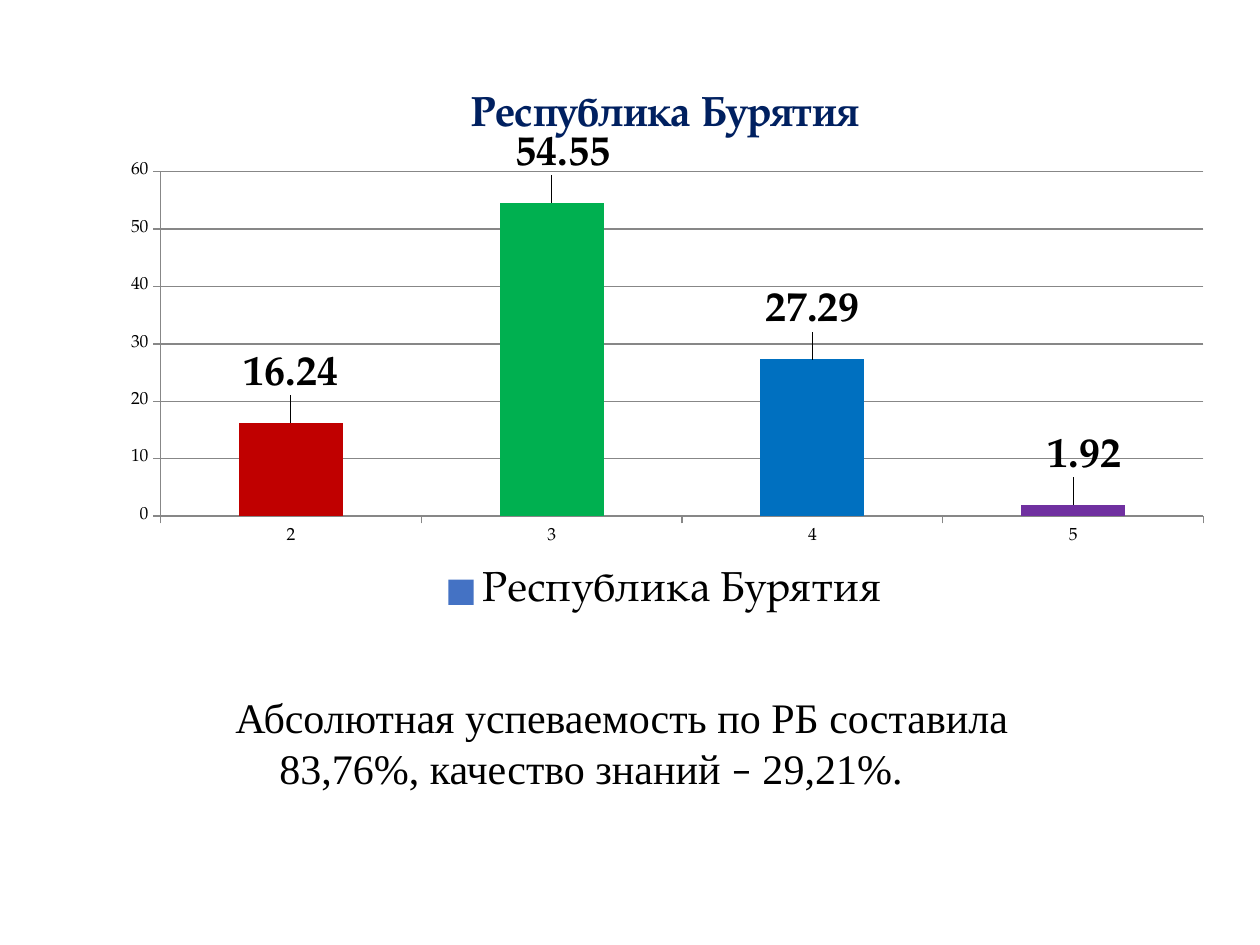
from lxml import etree
from pptx import Presentation
from pptx.chart.data import CategoryChartData
from pptx.dml.color import RGBColor
from pptx.enum.chart import XL_CHART_TYPE, XL_LABEL_POSITION, XL_LEGEND_POSITION, XL_TICK_MARK
from pptx.enum.text import MSO_ANCHOR, PP_ALIGN
from pptx.oxml.ns import qn
from pptx.util import Inches, Pt

COLUMNS = XL_CHART_TYPE.COLUMN_CLUSTERED
OUTSIDE_END = XL_LABEL_POSITION.OUTSIDE_END
BOTTOM = XL_LEGEND_POSITION.BOTTOM
OUTSIDE, NO_TICK = XL_TICK_MARK.OUTSIDE, XL_TICK_MARK.NONE
MIDDLE, CENTER = MSO_ANCHOR.MIDDLE, PP_ALIGN.CENTER

WIDTH, HEIGHT = Inches(10), Inches(7.5)
COLORS = {"text": "000000", "title": "002060", "series": "4472C4", "line": "878787"}
CHART_FONT, BODY_FONT, DASH_FONT = "TeX Gyre Pagella", "Times New Roman", "Calibri"
SMALL, LARGE = Pt(10), Pt(24)
REGION = "Республика Бурятия"
GRADES = [
    ("2", 16.24, "C00000", 0),
    ("3", 54.55, "00B050", 0.01),
    ("4", 27.29, "0070C0", 0),
    ("5", 1.92, "7030A0", 0.01),
]
LABEL_LIFT = -0.04
PLOT_BOX = {"x": 0.05, "y": 0.19, "w": 0.93, "h": 0.62}
SUMMARY = [
    ("Абсолютная успеваемость по РБ составила 83,76%, качество знаний ", BODY_FONT),
    ("–", DASH_FONT),
    (" 29,21%.", BODY_FONT),
]


def share_box(left, top, width, height):
    """Turn shares of the slide's size into lengths."""
    return (int(left * WIDTH), int(top * HEIGHT), int(width * WIDTH), int(height * HEIGHT))


def style_font(font, name, size, color, bold=False):
    """Give a font its face, size, colour and weight."""
    font.name, font.size, font.bold = name, size, bold
    font.color.rgb = RGBColor.from_string(COLORS[color])


def fill_solid(part, color):
    """Fill a chart part with one colour."""
    part.format.fill.solid()
    part.format.fill.fore_color.rgb = RGBColor.from_string(color)


def make_layout(settings):
    """Return a manual chart layout with the given settings."""
    layout = etree.Element(qn("c:layout"))
    manual = etree.SubElement(layout, qn("c:manualLayout"))
    for name, value in settings.items():
        etree.SubElement(manual, qn(f"c:{name}")).set("val", str(value))
    return layout


def style_axes(chart):
    """Draw thin grey axes and gridlines with small labels."""
    value_axis, category_axis = chart.value_axis, chart.category_axis
    value_axis.minimum_scale, value_axis.maximum_scale, value_axis.major_unit = 0, 60, 10
    value_axis.has_major_gridlines = True
    for axis in (value_axis, category_axis):
        axis.major_tick_mark, axis.minor_tick_mark = OUTSIDE, NO_TICK
        style_font(axis.tick_labels.font, CHART_FONT, SMALL, "text")
    for part in (value_axis, category_axis, value_axis.major_gridlines):
        part.format.line.width = Pt(0.75)
        part.format.line.color.rgb = RGBColor.from_string(COLORS["line"])


def style_columns(plot):
    """Colour each column and place its raised value label."""
    plot.gap_width, plot.vary_by_categories = 150, False
    series = plot.series[0]
    fill_solid(series, COLORS["series"])
    for index, (_, _, color, _) in enumerate(GRADES):
        point = series.points[index]
        fill_solid(point, color)
        style_font(point.data_label.font, CHART_FONT, LARGE, "text", True)
        point.data_label.position = OUTSIDE_END
    labels = series._element.iter(qn("c:dLbl"))
    for label, (_, _, _, shift) in zip(labels, GRADES):
        label.insert(1, make_layout({"x": shift, "y": LABEL_LIFT}))


def add_grade_chart(slide, box):
    """Place the column chart of grades in the box."""
    data = CategoryChartData()
    data.categories = [grade for grade, *_ in GRADES]
    data.add_series(REGION, [value for _, value, *_ in GRADES])
    chart = slide.shapes.add_chart(COLUMNS, *box, data).chart
    style_font(chart.font, CHART_FONT, SMALL, "text")
    chart.has_title = True
    run = chart.chart_title.text_frame.paragraphs[0].add_run()
    run.text = REGION
    style_font(run.font, CHART_FONT, LARGE, "title", True)
    chart.has_legend = True
    chart.legend.position, chart.legend.include_in_layout = BOTTOM, False
    style_font(chart.legend.font, CHART_FONT, LARGE, "text")
    style_axes(chart)
    style_columns(chart.plots[0])
    plot_area = chart._chartSpace.chart.plotArea
    for old_layout in plot_area.findall(qn("c:layout")):
        plot_area.remove(old_layout)
    modes = {"layoutTarget": "inner", "xMode": "edge", "yMode": "edge"}
    plot_area.insert(0, make_layout({**modes, **PLOT_BOX}))


def add_summary(slide, box):
    """Place the centred summary sentence in the box."""
    frame = slide.shapes.add_textbox(*box).text_frame
    frame.word_wrap, frame.vertical_anchor = True, MIDDLE
    paragraph = frame.paragraphs[0]
    paragraph.alignment = CENTER
    paragraph._p.get_or_add_pPr().set("indent", str(Inches(0.49)))
    for text, font_name in SUMMARY:
        run = paragraph.add_run()
        run.text = text
        style_font(run.font, font_name, LARGE, "text")


def main():
    """Build and save the slide."""
    presentation = Presentation()
    presentation.slide_width, presentation.slide_height = WIDTH, HEIGHT
    slide = presentation.slides.add_slide(presentation.slide_layouts[6])
    add_grade_chart(slide, share_box(0.083, 0.07, 0.89, 0.588))
    add_summary(slide, share_box(0.083, 0.725, 0.772, 0.121))
    presentation.save("out.pptx")


if __name__ == "__main__":
    main()
